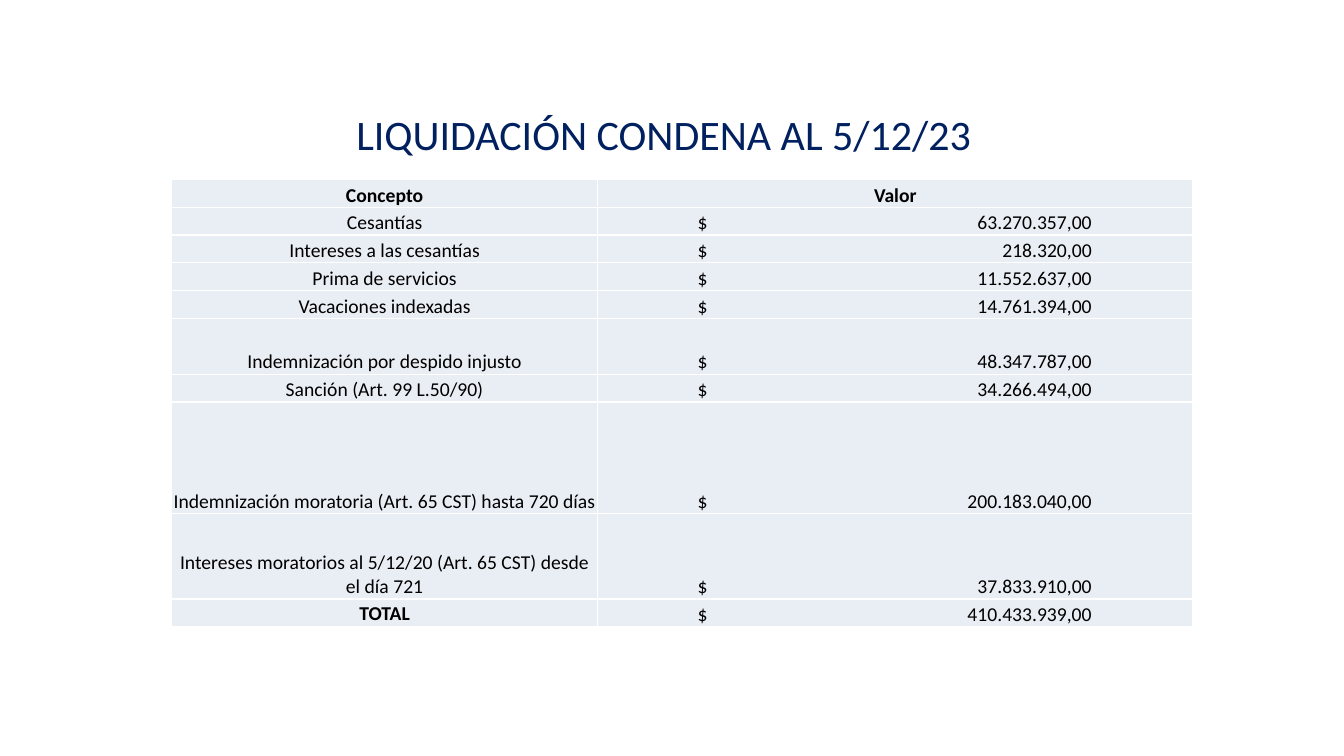
from lxml import etree
from pptx import Presentation
from pptx.dml.color import RGBColor
from pptx.enum.text import MSO_ANCHOR, PP_ALIGN
from pptx.oxml.ns import qn
from pptx.util import Inches, Pt

NAVY = RGBColor(0x00, 0x20, 0x60)
BLACK = RGBColor(0x00, 0x00, 0x00)
WHITE = RGBColor(0xFF, 0xFF, 0xFF)
PALE_BLUE = RGBColor(0xE9, 0xED, 0xF4)
CENTER, LEFT = PP_ALIGN.CENTER, PP_ALIGN.LEFT
MIDDLE, BOTTOM = MSO_ANCHOR.MIDDLE, MSO_ANCHOR.BOTTOM
FONT = "Calibri"

TABLE_HEIGHT = 4.44
INTEREST_HEIGHT = 0.85
COLUMN_WIDTHS = (4.23, 5.9)
# Currency sign starts at the first stop, amounts end at the second
AMOUNT_TABS = ((0.98, "l"), (4.89, "r"))

# Concept, amount, height in single lines (None: the taller interest row)
ITEMS = [
    ("Cesantías", "63.270.357,00", 1),
    ("Intereses a las cesantías", "218.320,00", 1),
    ("Prima de servicios", "11.552.637,00", 1),
    ("Vacaciones indexadas", "14.761.394,00", 1),
    ("Indemnización por despido injusto", "48.347.787,00", 2),
    ("Sanción (Art. 99 L.50/90)", "34.266.494,00", 1),
    ("Indemnización moratoria (Art. 65 CST) hasta 720 días", "200.183.040,00", 4),
    ("Intereses moratorios al 5/12/20 (Art. 65 CST) desde el día 721",
     "37.833.910,00", None),
    ("TOTAL", "410.433.939,00", 1),
]


def add_run(paragraph, text, size, color, bold=False):
    run = paragraph.add_run()
    run.text = text
    run.font.name = FONT
    run.font.size = Pt(size)
    run.font.bold = bold
    run.font.color.rgb = color


def add_title(slide, text):
    box = slide.shapes.add_textbox(Inches(0.5), Inches(1.08), Inches(12.17), Inches(0.5))
    frame = box.text_frame
    frame.word_wrap = True
    frame.margin_left = frame.margin_right = frame.margin_top = frame.margin_bottom = 0
    frame.paragraphs[0].alignment = CENTER
    add_run(frame.paragraphs[0], text, 30, NAVY)


def set_borders(cell):
    properties = cell._tc.get_or_add_tcPr()
    for position, side in enumerate(("lnL", "lnR", "lnT", "lnB")):
        line = etree.Element(qn(f"a:{side}"), w=str(Pt(1)))
        fill = etree.SubElement(line, qn("a:solidFill"))
        etree.SubElement(fill, qn("a:srgbClr"), val=str(WHITE))
        properties.insert(position, line)


def set_tabs(paragraph, stops):
    tab_list = etree.SubElement(paragraph._p.get_or_add_pPr(), qn("a:tabLst"))
    for position, side in stops:
        etree.SubElement(tab_list, qn("a:tab"), pos=str(Inches(position)), algn=side)


def fill_cell(cell, text, bold=False, anchor=BOTTOM, tabs=()):
    cell.margin_left = cell.margin_right = cell.margin_top = Inches(0.01)
    cell.margin_bottom = 0
    cell.vertical_anchor = anchor
    cell.fill.solid()
    cell.fill.fore_color.rgb = PALE_BLUE
    set_borders(cell)
    paragraph = cell.text_frame.paragraphs[0]
    paragraph.alignment = LEFT if tabs else CENTER
    if tabs:
        set_tabs(paragraph, tabs)
    add_run(paragraph, text, 14, BLACK, bold)


def add_settlement_table(slide):
    table = slide.shapes.add_table(
        len(ITEMS) + 1, 2, Inches(1.7), Inches(1.78),
        Inches(sum(COLUMN_WIDTHS)), Inches(TABLE_HEIGHT)).table
    for column, width in zip(table.columns, COLUMN_WIDTHS):
        column.width = Inches(width)

    # Row heights are multiples of one line
    line_counts = [1] + [lines for _, _, lines in ITEMS]
    line_height = (TABLE_HEIGHT - INTEREST_HEIGHT) / sum(n for n in line_counts if n)
    for row, lines in zip(table.rows, line_counts):
        row.height = Inches(lines * line_height if lines else INTEREST_HEIGHT)

    # Header
    for column, heading in enumerate(("Concepto", "Valor")):
        fill_cell(table.cell(0, column), heading, bold=True)

    # Items and total
    for row, (concept, amount, _) in enumerate(ITEMS, start=1):
        is_total = row == len(ITEMS)
        fill_cell(table.cell(row, 0), concept, is_total, MIDDLE if is_total else BOTTOM)
        fill_cell(table.cell(row, 1), f"\t$\t{amount}", tabs=AMOUNT_TABS)


def main():
    presentation = Presentation()
    presentation.slide_width = Inches(13.33)
    presentation.slide_height = Inches(7.5)
    slide = presentation.slides.add_slide(presentation.slide_layouts[6])
    add_title(slide, "LIQUIDACIÓN CONDENA AL 5/12/23")
    add_settlement_table(slide)
    presentation.save("out.pptx")


if __name__ == "__main__":
    main()
